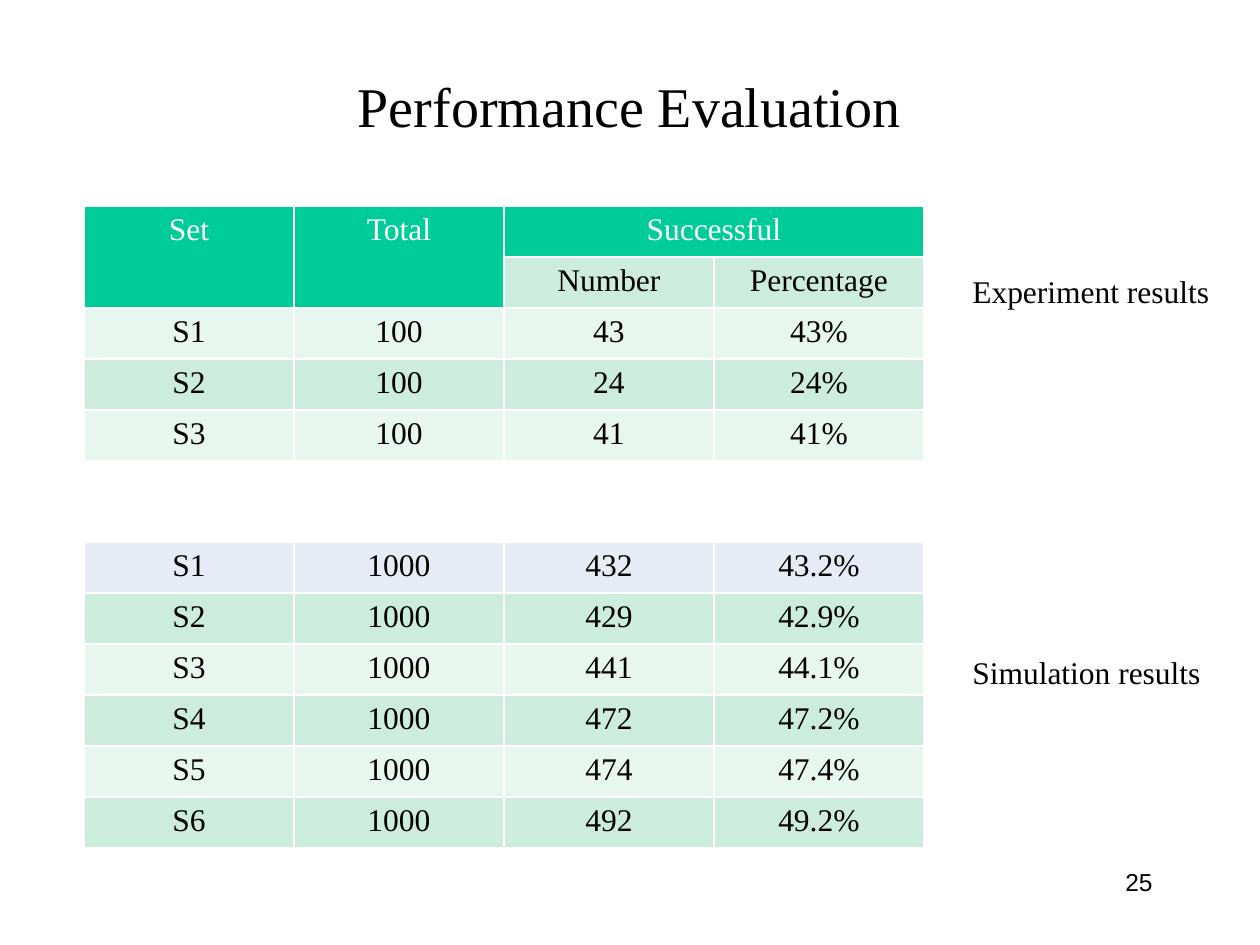
import pptx
import pptx.util
import pptx.dml.color
import pptx.enum.text
import pptx.oxml

RGB = pptx.dml.color.RGBColor
ALIGN = pptx.enum.text.PP_ALIGN
ANCHOR = pptx.enum.text.MSO_ANCHOR

PX_PER_INCH = 126
SERIF = "Times New Roman"
SANS = "Arial"
BLACK = RGB(0x00, 0x00, 0x00)
WHITE = RGB(0xFF, 0xFF, 0xFF)
GREEN = RGB(0x00, 0xCC, 0x99)
MINT = RGB(0xCC, 0xEC, 0xDE)
PALE = RGB(0xE7, 0xF6, 0xEF)
LAVENDER = RGB(0xE7, 0xEB, 0xF5)

TABLE_LEFT = 84
COL_WIDTH = 210
ROW_HEIGHT = 51
NOTE_LEFT = 960
NOTE_WIDTH = 262

EXPERIMENT = [
    ("Set", "Total", "Successful", ""),
    ("", "", "Number", "Percentage"),
    ("S1", "100", "43", "43%"),
    ("S2", "100", "24", "24%"),
    ("S3", "100", "41", "41%"),
]
SIMULATION = [
    ("S1", "1000", "432", "43.2%"),
    ("S2", "1000", "429", "42.9%"),
    ("S3", "1000", "441", "44.1%"),
    ("S4", "1000", "472", "47.2%"),
    ("S5", "1000", "474", "47.4%"),
    ("S6", "1000", "492", "49.2%"),
]
EXPERIMENT_MERGES = [((0, 0), (1, 0)), ((0, 1), (1, 1)), ((0, 2), (0, 3))]


def px(n):
    return pptx.util.Emu(round(n * 914400 / PX_PER_INCH))


def write(tf, text, size, align, color=BLACK, font=SERIF):
    p = tf.paragraphs[0]
    p.alignment = align
    r = p.add_run()
    r.text = text
    r.font.size = pptx.util.Pt(size)
    r.font.name = font
    r.font.color.rgb = color


def add_title(s, text):
    sp = s.shapes.title
    sp.left, sp.top, sp.width, sp.height = px(94), px(53), px(1071), px(105)
    sp.text_frame.vertical_anchor = ANCHOR.MIDDLE
    write(sp.text_frame, text, 32, ALIGN.CENTER)


def add_text(s, box, text, size, align, font=SERIF):
    sp = s.shapes.add_textbox(*map(px, box))
    tf = sp.text_frame
    tf.word_wrap = True
    write(tf, text, size, align, font=font)


def set_borders(cell, color):
    tcPr = cell._tc.get_or_add_tcPr()
    for i, side in enumerate(("lnL", "lnR", "lnT", "lnB")):
        ln = pptx.oxml.parse_xml(
            f'<a:{side} xmlns:a="http://schemas.openxmlformats.org/drawingml/2006/main" '
            f'w="{pptx.util.Pt(1)}"><a:solidFill><a:srgbClr val="{color}"/>'
            f'</a:solidFill></a:{side}>')
        tcPr.insert(i, ln)


def add_table(s, top, rows, head_fill, head_color, merges=()):
    cols = len(rows[0])
    frame = s.shapes.add_table(len(rows), cols, px(TABLE_LEFT), px(top),
                               px(COL_WIDTH * cols), px(ROW_HEIGHT * len(rows)))
    table = frame.table
    table.first_row = False
    table.horz_banding = False
    for start, end in merges:
        table.cell(*start).merge(table.cell(*end))
    for i, row in enumerate(rows):
        for j, text in enumerate(row):
            cell = table.cell(i, j)
            cell.fill.solid()
            cell.fill.fore_color.rgb = (MINT if i % 2 else PALE) if i else head_fill
            set_borders(cell, WHITE)
            if text:
                write(cell.text_frame, text, 18, ALIGN.CENTER,
                      BLACK if i else head_color)


def main():
    prs = pptx.Presentation()
    prs.slide_width, prs.slide_height = px(1260), px(945)
    s = prs.slides.add_slide(prs.slide_layouts[5])
    add_title(s, "Performance Evaluation")
    add_table(s, 206, EXPERIMENT, GREEN, WHITE, EXPERIMENT_MERGES)
    add_table(s, 542, SIMULATION, LAVENDER, BLACK)
    for top, text in ((266, "Experiment results"), (647, "Simulation results")):
        add_text(s, (NOTE_LEFT, top, NOTE_WIDTH, 51), text, 18, ALIGN.LEFT)
    add_text(s, (903, 861, NOTE_WIDTH, 63), "25", 14, ALIGN.RIGHT, SANS)
    prs.save("out.pptx")


if __name__ == "__main__":
    main()
